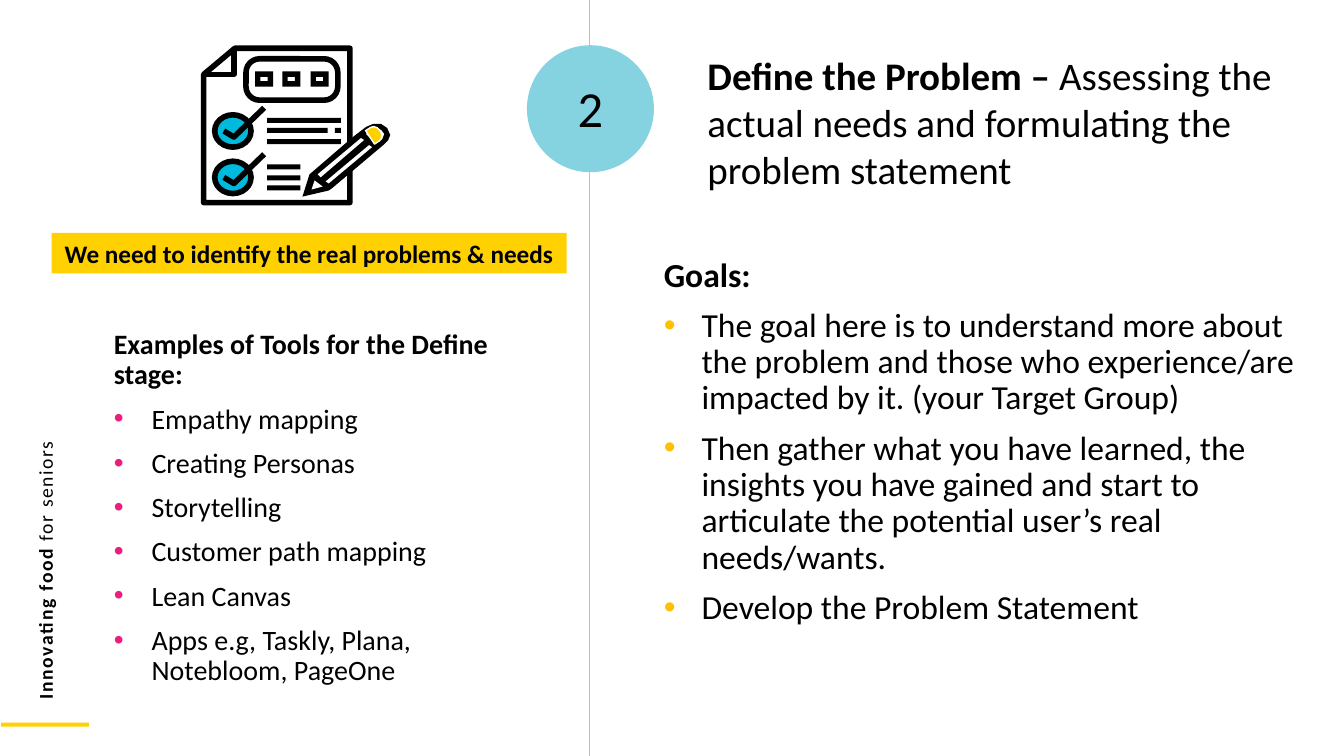
from dataclasses import dataclass

from lxml.etree import SubElement
from pptx import Presentation
from pptx.dml.color import RGBColor
from pptx.enum.shapes import MSO_CONNECTOR, MSO_SHAPE
from pptx.enum.text import MSO_ANCHOR, PP_ALIGN
from pptx.oxml.ns import qn
from pptx.util import Cm, Pt


@dataclass(frozen=True)
class Theme:
    font: str = "Calibri"
    black: str = "000000"
    white: str = "FFFFFF"
    yellow: str = "FFD100"
    aqua: str = "85D2E1"
    cyan: str = "00BADE"
    rule: str = "BFBFBF"
    goal_bullet: str = "FFC000"
    tool_bullet: str = "ED1C7F"
    number: float = 36
    title: float = 27.9
    goals: float = 24
    tools: float = 20
    banner: float = 18
    side: float = 14
    stroke: float = 4


T = Theme()

GOALS = [
    "The goal here is to understand more about the problem and those who "
    "experience/are impacted by it. (your Target Group)",
    "Then gather what you have learned, the insights you have gained and start "
    "to articulate the potential user’s real needs/wants.",
    "Develop the Problem Statement",
]
TOOLS = [
    "Empathy mapping",
    "Creating Personas",
    "Storytelling",
    "Customer path mapping",
    "Lean Canvas",
    "Apps e.g, Taskly, Plana, Notebloom, PageOne",
]


def rgb(value):
    return RGBColor.from_string(value)


def paint(sp, fill=None, line=None, width=T.stroke):
    sp.shadow.inherit = False
    if fill:
        sp.fill.solid()
        sp.fill.fore_color.rgb = rgb(fill)
    else:
        sp.fill.background()
    if line:
        sp.line.color.rgb = rgb(line)
        sp.line.width = Pt(width)
    else:
        sp.line.fill.background()
    return sp


def write(p, runs, size):
    """Add (text, bold) runs to a paragraph."""
    for text, bold in runs:
        r = p.add_run()
        r.text = text
        r.font.name, r.font.size, r.font.bold = T.font, Pt(size), bold
        r.font.color.rgb = rgb(T.black)


def add_text(s, box, runs, size):
    sp = s.shapes.add_textbox(*box)
    sp.text_frame.word_wrap = True
    write(sp.text_frame.paragraphs[0], runs, size)
    return sp


def add_bullet(p, color):
    pPr = p._p.get_or_add_pPr()
    pPr.set("marL", str(Cm(0.95)))
    pPr.set("indent", str(-Cm(0.95)))
    SubElement(SubElement(pPr, qn("a:buClr")), qn("a:srgbClr"), val=color)
    SubElement(pPr, qn("a:buFont"), typeface="Arial")
    SubElement(pPr, qn("a:buChar"), char="•")


def add_bulleted_list(s, box, heading, items, size, color):
    tf = add_text(s, box, [(heading, True)], size).text_frame
    tf.paragraphs[0].line_spacing = 0.9
    for item in items:
        p = tf.add_paragraph()
        add_bullet(p, color)
        p.line_spacing, p.space_before = 0.9, Pt(10)
        write(p, [(item, False)], size)


def add_frame(s, prs):
    """Centre rule and the vertical side title with its accent bar."""
    x = Cm(14.86)
    rule = s.shapes.add_connector(MSO_CONNECTOR.STRAIGHT, x, 0, x, prs.slide_height)
    rule.line.color.rgb = rgb(T.rule)
    rule.line.width = Pt(0.75)
    SubElement(rule._element.spPr, qn("a:effectLst"))
    paint(s.shapes.add_shape(MSO_SHAPE.RECTANGLE, Cm(0.03), Cm(18.21), Cm(2.21), Cm(0.1)),
          T.yellow)
    side = add_text(s, (Cm(-8.43), Cm(7.87), Cm(19.15), Cm(0.86)),
                    [("Innovating food ", True), ("for seniors", False)], T.side)
    side.rotation = 270
    for r in side.text_frame.paragraphs[0].runs:
        r.font._element.set("spc", "110")


def add_number(s, left, top, size, number):
    paint(s.shapes.add_shape(MSO_SHAPE.OVAL, left, top, size, size), T.aqua)
    box = left, top + Cm(0.84), size, Cm(2.39)
    p = add_text(s, box, [(number, False)], T.number).text_frame.paragraphs[0]
    p.alignment, p.line_spacing = PP_ALIGN.CENTER, 0.9


def add_banner(s, box, text):
    sp = paint(s.shapes.add_shape(MSO_SHAPE.RECTANGLE, *box), T.yellow)
    tf = sp.text_frame
    tf.word_wrap, tf.vertical_anchor = True, MSO_ANCHOR.MIDDLE
    tf.paragraphs[0].alignment = PP_ALIGN.CENTER
    write(tf.paragraphs[0], [(text, True)], T.banner)


def add_checklist_icon(s, left, top, width):
    """Checklist page with a pencil, drawn on a grid 188 units wide."""
    shapes = s.shapes.add_group_shape().shapes
    unit = width / 188

    def preset(kind, x, y, w, h):
        return shapes.add_shape(kind, left + round(x * unit), top + round(y * unit),
                                round(w * unit), round(h * unit))

    def outline(points, close=True):
        builder = shapes.build_freeform(*points[0], scale=unit)
        builder.add_line_segments(points[1:], close=close)
        return builder.convert_to_shape(left, top)

    page = [(35, 3), (149, 3), (149, 156), (4, 156), (4, 29)]
    paint(outline(page), T.white, T.black)
    paint(outline([(4, 29), (34, 29), (34, 3)], close=False), None, T.black)

    answer = preset(MSO_SHAPE.ROUNDED_RECTANGLE, 46, 13.5, 91, 41)
    answer.adjustments[0] = 0.33
    paint(answer, T.white, T.black)
    for x in (55, 82, 110):
        square = preset(MSO_SHAPE.FRAME, x, 26, 18, 15)
        square.adjustments[0] = 0.36
        paint(square, T.black)

    text_lines = [(67, 72, 73), (67, 82, 60), (134, 82, 6), (67, 93, 73),
                  (67, 118, 33), (67, 129, 33), (67, 139, 33)]
    for x, y, w in text_lines:
        paint(preset(MSO_SHAPE.RECTANGLE, x, y, w, 5), T.black)
    for y in (62, 108):
        paint(preset(MSO_SHAPE.OVAL, 15, y + 7, 36, 32), T.cyan, T.black)
        tick = [(24, y + 23), (34, y + 29), (64, y)]
        paint(outline(tick, close=False), None, T.black)

    pencil = [(102, 150), (109, 128), (152, 91), (165, 81), (172, 78), (180, 78),
              (186, 82), (189, 89), (187, 94), (182, 99), (131, 142), (128, 144)]
    paint(outline(pencil), T.black)
    highlights = [
        [(160, 92), (117, 128), (120, 131), (163, 94)],
        [(128, 137), (171, 101), (168, 99), (125, 135)],
        [(114, 134), (111, 143), (122, 140)],
        [(175, 97), (181, 93), (183, 88), (180, 84), (175, 82), (170, 84), (165, 88)],
    ]
    for points in highlights:
        paint(outline(points), T.white)
    eraser = preset(MSO_SHAPE.FLOWCHART_DELAY, 168, 80, 12, 16)
    eraser.rotation = 326.6
    paint(eraser, T.yellow, T.white, 1)


def build_stage_slide(prs):
    s = prs.slides.add_slide(prs.slide_layouts[6])
    add_frame(s, prs)
    add_number(s, Cm(13.28), Cm(1.14), Cm(3.2), "2")
    add_text(s, (Cm(17.58), Cm(1.17), Cm(15.09), Cm(4.57)),
             [("Define the Problem – ", True),
              ("Assessing the actual needs and formulating the problem statement", False)],
             T.title)
    add_bulleted_list(s, (Cm(16.48), Cm(6.38), Cm(16.81), Cm(10.34)),
                      "Goals:", GOALS, T.goals, T.goal_bullet)
    add_checklist_icon(s, Cm(5.03), Cm(1.14), Cm(4.78))
    add_banner(s, (Cm(1.3), Cm(5.87), Cm(12.98), Cm(1.02)),
               "We need to identify the real problems & needs")
    add_bulleted_list(s, (Cm(2.62), Cm(8.2), Cm(10.67), Cm(9.55)),
                      "Examples of Tools for the Define stage:", TOOLS,
                      T.tools, T.tool_bullet)


def main():
    prs = Presentation()
    prs.slide_width, prs.slide_height = Cm(33.87), Cm(19.05)
    build_stage_slide(prs)
    prs.save("out.pptx")


if __name__ == "__main__":
    main()
